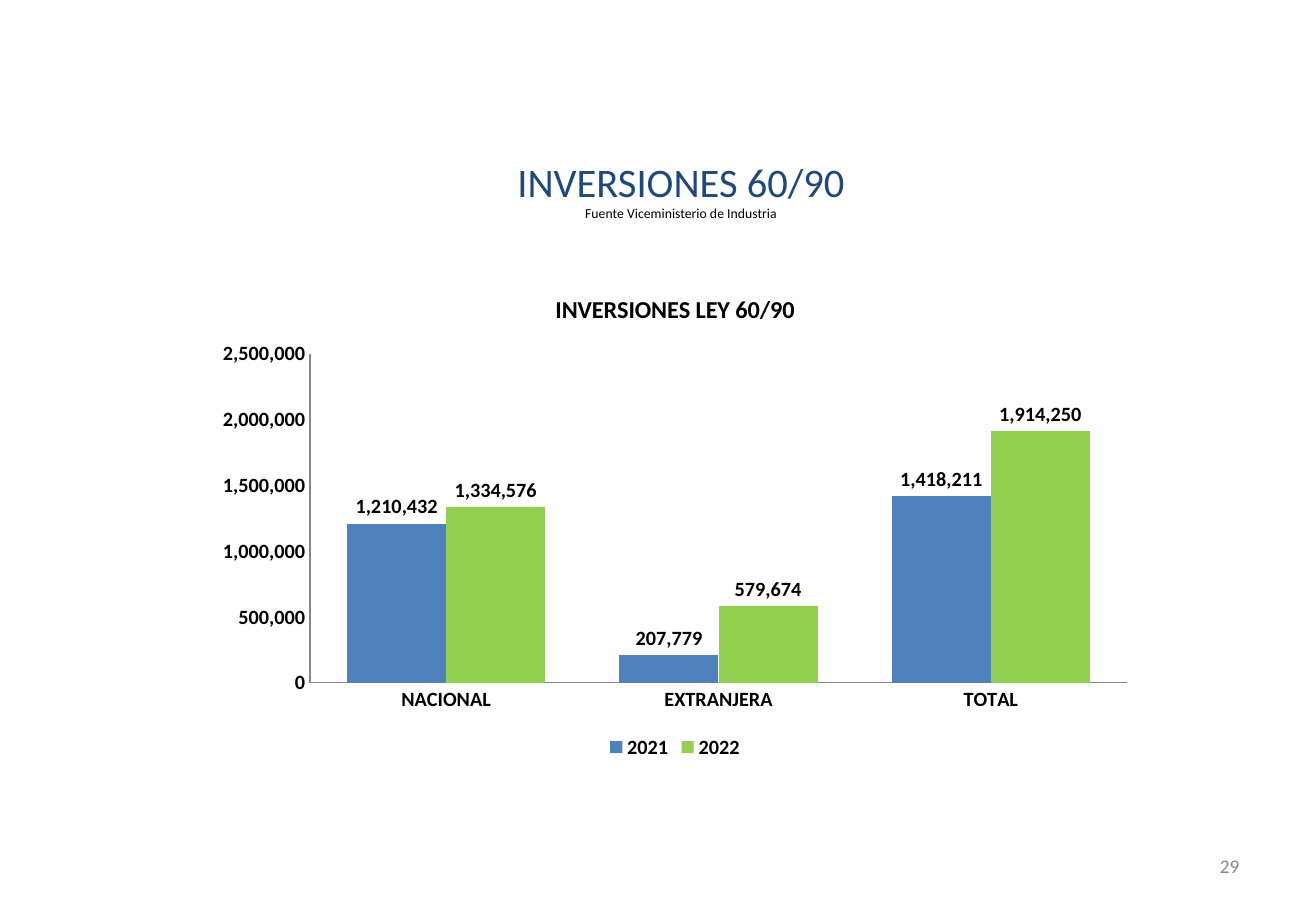
import pptx
import pptx.chart.data
import pptx.dml.color
import pptx.enum.chart
import pptx.enum.text
import pptx.util

# Content
FONT = "Calibri"
HEADING = "INVERSIONES 60/90"
SOURCE = "Fuente Viceministerio de Industria"
PAGE_NUMBER = "29"
CHART_TITLE = "INVERSIONES LEY 60/90"
CATEGORIES = ["NACIONAL", "EXTRANJERA", "TOTAL"]
SERIES = [
    ("2021", "4F81BD", (1210432, 207779, 1418211)),
    ("2022", "92D050", (1334576, 579674, 1914250)),
]
NUMBER_FORMAT = "#,##0"

# Layout: left, top, width, height in inches
WIDTH, HEIGHT = 10.83, 7.5
HEADING_AREA = (2.56, 1.21, 6.09, 0.62)
CHART_AREA = (1.68, 2.24, 7.75, 4.05)
NUMBER_AREA = (9.88, 7.06, 0.36, 0.34)


def color(value):
    return pptx.dml.color.RGBColor.from_string(value)


def inches(area):
    return [pptx.util.Inches(length) for length in area]


def style(font, size, value, bold=False):
    font.name = FONT
    font.size = pptx.util.Pt(size)
    font.bold = bold
    font.color.rgb = color(value)


def add_box(page, area, top_inset=0):
    frame = page.shapes.add_textbox(*inches(area)).text_frame
    frame.word_wrap = True
    frame.margin_left = frame.margin_right = frame.margin_bottom = 0
    frame.margin_top = pptx.util.Inches(top_inset)
    return frame


def add_heading(page):
    para = add_box(page, HEADING_AREA, 0.08).paragraphs[0]
    para.text = f"{HEADING}\v{SOURCE}"
    para.alignment = pptx.enum.text.PP_ALIGN.CENTER
    heading, source = para.runs
    style(heading.font, 24, "1F487C")
    style(source.font, 8.1, "000000")


def add_page_number(page):
    frame = add_box(page, NUMBER_AREA)
    frame.margin_left = pptx.util.Inches(0.16)
    para = frame.paragraphs[0]
    para.text = PAGE_NUMBER
    para.line_spacing = pptx.util.Pt(11.7)
    style(para.runs[0].font, 11.4, "888888")


def add_investment_chart(page):
    data = pptx.chart.data.CategoryChartData(number_format=NUMBER_FORMAT)
    data.categories = CATEGORIES
    for name, _, values in SERIES:
        data.add_series(name, values)
    chart = page.shapes.add_chart(
        pptx.enum.chart.XL_CHART_TYPE.COLUMN_CLUSTERED, *inches(CHART_AREA), data
    ).chart
    style(chart.font, 12, "000000", bold=True)

    # Title and legend
    chart.has_title = True
    title = chart.chart_title.text_frame
    title.text = CHART_TITLE
    style(title.paragraphs[0].runs[0].font, 14.4, "000000", bold=True)
    chart.chart_title.include_in_layout = False
    chart.has_legend = True
    chart.legend.position = pptx.enum.chart.XL_LEGEND_POSITION.BOTTOM
    chart.legend.include_in_layout = False

    # Axes
    for axis in (chart.category_axis, chart.value_axis):
        axis.has_major_gridlines = False
        axis.major_tick_mark = pptx.enum.chart.XL_TICK_MARK.NONE
        axis.minor_tick_mark = pptx.enum.chart.XL_TICK_MARK.NONE
        axis.format.line.color.rgb = color("868686")
        axis.format.line.width = pptx.util.Pt(0.75)
    chart.value_axis.tick_labels.number_format = NUMBER_FORMAT
    chart.value_axis.tick_labels.number_format_is_linked = False

    # Columns and their labels
    plot = chart.plots[0]
    plot.gap_width = 75
    plot.overlap = 0
    plot.vary_by_categories = False
    for series, (_, fill, _) in zip(plot.series, SERIES):
        series.format.fill.solid()
        series.format.fill.fore_color.rgb = color(fill)
        labels = series.data_labels
        labels.show_value = True
        labels.number_format = NUMBER_FORMAT
        labels.number_format_is_linked = False
        labels.position = pptx.enum.chart.XL_LABEL_POSITION.OUTSIDE_END
        style(labels.font, 12, "000000", bold=True)


def main():
    deck = pptx.Presentation()
    deck.slide_width, deck.slide_height = inches((WIDTH, HEIGHT))
    page = deck.slides.add_slide(deck.slide_layouts[6])
    add_heading(page)
    add_page_number(page)
    add_investment_chart(page)
    deck.save("out.pptx")


if __name__ == "__main__":
    main()
